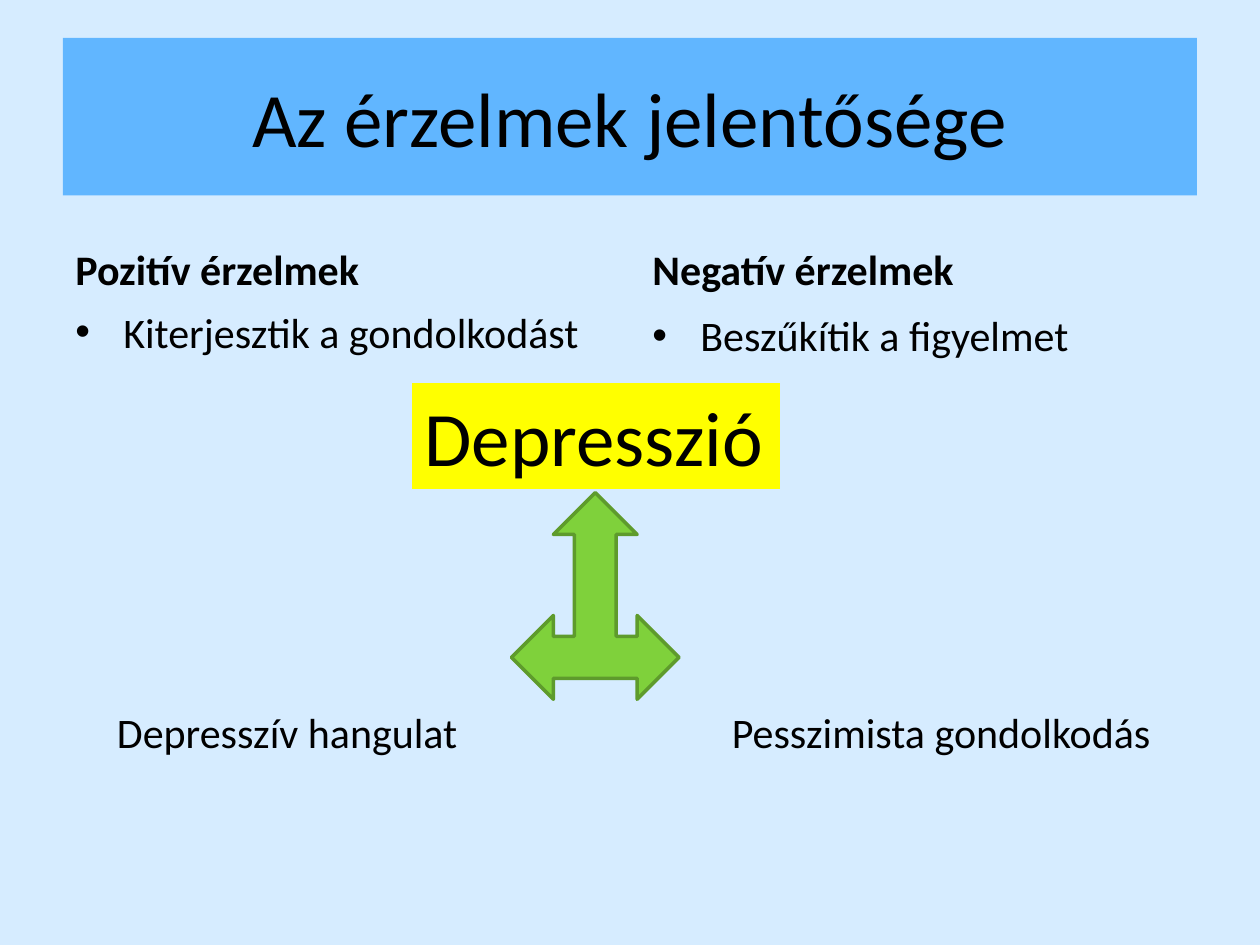
import pptx
import pptx.util
import pptx.dml.color
import pptx.enum.shapes
import pptx.enum.text
import pptx.oxml
import pptx.oxml.ns
from pptx.util import Inches

RGBColor = pptx.dml.color.RGBColor
SHAPE = pptx.enum.shapes.MSO_SHAPE
ANCHOR = pptx.enum.text.MSO_ANCHOR
ALIGN = pptx.enum.text.PP_ALIGN

PALE_BLUE = RGBColor(0xD6, 0xEC, 0xFF)
BLUE = RGBColor(0x61, 0xB6, 0xFF)
YELLOW = RGBColor(0xFF, 0xFF, 0x00)
GREEN = RGBColor(0x7F, 0xD1, 0x3B)
DARK_GREEN = RGBColor(0x5E, 0x9B, 0x2C)
BLACK = RGBColor(0, 0, 0)

# Content
TITLE = "Az érzelmek jelentősége"
COLUMNS = [  # heading, bullet, top of the bullet box
    ("Pozitív érzelmek", "Kiterjesztik a gondolkodást", 2.38),
    ("Negatív érzelmek", "Beszűkítik a figyelmet", 2.41),
]
CENTRE = "Depresszió"
OUTCOMES = [  # text, left, width
    ("Depresszív hangulat", 0.83, 3.01),
    ("Pesszimista gondolkodás", 5.71, 3.55),
]

# Layout in inches
MARGIN, COLUMN_WIDTH, GUTTER = 0.5, 4.42, 0.16
INDENT = 0.38


def add_text(slide, text, box, size=24, bold=False, anchor=ANCHOR.TOP,
             align=ALIGN.LEFT, wrap=True, fill=None):
    shape = slide.shapes.add_textbox(*map(Inches, box))
    if fill is not None:
        shape.fill.solid()
        shape.fill.fore_color.rgb = fill
    frame = shape.text_frame
    frame.text = text
    frame.word_wrap = wrap
    frame.vertical_anchor = anchor
    paragraph = frame.paragraphs[0]
    paragraph.alignment = align
    font = paragraph.runs[0].font
    font.name, font.size, font.bold = "Calibri", pptx.util.Pt(size), bold
    font.color.rgb = BLACK
    return paragraph


def add_bullet(paragraph):
    properties = paragraph._p.get_or_add_pPr()
    properties.set("marL", str(Inches(INDENT)))
    properties.set("indent", str(-Inches(INDENT)))
    for tag, name, value in (("a:buFont", "typeface", "Arial"), ("a:buChar", "char", "•")):
        element = pptx.oxml.parse_xml(f"<{tag} {pptx.oxml.ns.nsdecls('a')}/>")
        element.set(name, value)
        properties.append(element)


presentation = pptx.Presentation()
presentation.slide_width, presentation.slide_height = Inches(10), Inches(7.5)
slide = presentation.slides.add_slide(presentation.slide_layouts[6])
slide.background.fill.solid()
slide.background.fill.fore_color.rgb = PALE_BLUE

# Title band
add_text(slide, TITLE, (MARGIN, 0.3, 9, 1.25), size=44,
         anchor=ANCHOR.MIDDLE, align=ALIGN.CENTER, fill=BLUE)

# Two columns
for index, (heading, bullet, top) in enumerate(COLUMNS):
    left = MARGIN + index * (COLUMN_WIDTH + GUTTER)
    add_text(slide, heading, (left, 1.68, COLUMN_WIDTH, 0.7), bold=True, anchor=ANCHOR.BOTTOM)
    add_bullet(add_text(slide, bullet, (left, top, COLUMN_WIDTH, 4.32)))

# Outcomes at the arrow's sides
for text, left, width in OUTCOMES:
    add_text(slide, text, (left, 5.56, width, 0.5), wrap=False)

# Three-way arrow
arrow = slide.shapes.add_shape(SHAPE.LEFT_RIGHT_UP_ARROW,
                               *map(Inches, (4.06, 3.91, 1.33, 1.64)))
arrow.shadow.inherit = False
arrow.fill.solid()
arrow.fill.fore_color.rgb = GREEN
arrow.line.color.rgb = DARK_GREEN
arrow.line.width = pptx.util.Pt(2)

# Central concept
add_text(slide, CENTRE, (3.27, 3.04, 2.92, 0.84), size=44, wrap=False, fill=YELLOW)

presentation.save("out.pptx")
